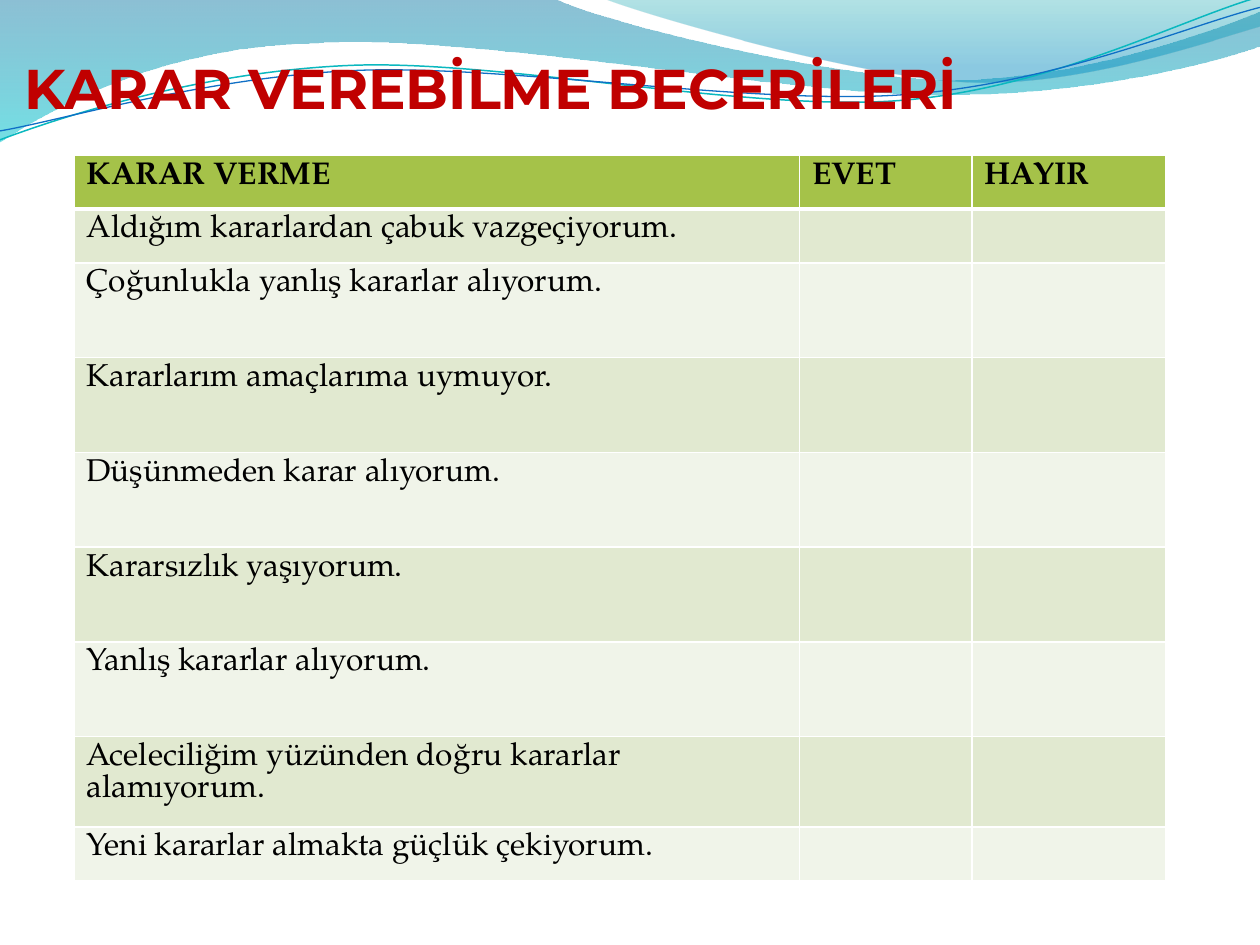
from dataclasses import dataclass
from lxml import etree
from pptx import Presentation
from pptx import util as u
from pptx.dml.color import RGBColor
from pptx.enum import text
from pptx.oxml import ns

Cm, Pt = u.Cm, u.Pt


@dataclass(frozen=True)
class Theme:
    title: str = "C00000"
    ink: str = "000000"
    rule: str = "FFFFFF"
    head: str = "A5C249"
    bands: tuple = ("E1E9D0", "F0F4E9")
    teal: str = "0AB8BF"
    blue: str = "0F6FC6"
    big: int = 32
    small: int = 18
    sans: str = "Montserrat"
    serif: str = "TeX Gyre Pagella"


T = Theme()

# Paths in cm: pairs are corners, six values are a curve (two handles, end)
WAVES = [
    ([(0, 0), (11.18, -0.03), (12.09, 0.43, 16.87, 1.6, 19.25, 1.6),
      (21.67, 1.6, 24.33, 0.66, 25.4, 0.23), (25.43, 0.91),
      (24.97, 1.12, 22.1, 1.93, 18.95, 1.91),
      (15.8, 1.91, 9.7, 0.71, 6.53, 0.86),
      (3.28, 0.91, 1.17, 2.11, -0.03, 2.87)],
     [(0, "0074A1", 45), (100, "00C6CF", 55)]),
    ([(12.17, -0.03), (12.93, 0.28, 17.32, 1.57, 19.53, 1.65),
      (21.74, 1.75, 24.41, 0.81, 25.4, 0.53), (25.4, 0)],
     [(0, "00A1A9", 30), (80, "008BBF", 45)]),
]
STROKES = [
    ([(0, 2.82), (1.22, 2.36, 4.01, 1.45, 7.04, 1.32),
      (10.03, 1.19, 15.06, 2.26, 18.11, 2.03),
      (21.16, 1.8, 23.83, 0.38, 25.35, -0.05)], T.teal, 0.85),
    ([(0, 2.64), (1.19, 2.44, 4.17, 1.55, 7.19, 1.42),
      (10.24, 1.3, 15.16, 2.13, 18.21, 1.91),
      (21.23, 1.7, 23.9, 0.53, 25.4, 0.15)], T.blue, 0.75),
]

ROWS = [
    (1.09, ("KARAR VERME", "EVET", "HAYIR")),
    (1.09, ("Aldığım kararlardan çabuk vazgeçiyorum.",)),
    (1.91, ("Çoğunlukla yanlış kararlar alıyorum.",)),
    (1.91, ("Kararlarım amaçlarıma uymuyor.",)),
    (1.91, ("Düşünmeden karar alıyorum.",)),
    (1.91, ("Kararsızlık yaşıyorum.",)),
    (1.91, ("Yanlış kararlar alıyorum.",)),
    (1.82, ("Aceleciliğim yüzünden doğru kararlar alamıyorum.",)),
    (1.08, ("Yeni kararlar almakta güçlük çekiyorum.",)),
]
COLS = (14.63, 3.47, 3.9)


def rgb(code):
    return RGBColor.from_string(code)


def assign(item, values):
    for name, value in values.items():
        setattr(item, name, value)


def style(font, color, **values):
    assign(font, values)
    font.color.rgb = rgb(color)


def node(parent, tag, **attrs):
    return etree.SubElement(parent, ns.qn(tag), attrs)


def bend(shape, path):
    """Turn the straight segments of curved parts into cubic curves."""
    track = shape._element.find(".//" + ns.qn("a:path"))
    for part, line in zip(path, list(track)):
        if len(part) == 2:
            continue
        curve = etree.Element(ns.qn("a:cubicBezTo"))
        for x, y in zip(part[::2], part[1::2]):
            node(curve, "a:pt", x=str(Cm(x) - shape.left),
                 y=str(Cm(y) - shape.top))
        track.replace(line, curve)


def outline(shapes, path, close):
    ends = [(Cm(part[-2]), Cm(part[-1])) for part in path]
    pen = shapes.build_freeform(*ends[0])
    pen.add_line_segments(ends[1:], close=close)
    shape = pen.convert_to_shape()
    shape.shadow.inherit = False
    bend(shape, path)
    return shape


def wave(shapes, path, stops):
    shape = outline(shapes, path, True)
    shape.line.fill.background()
    shape.fill.gradient()
    grad = shape._element.spPr.find(ns.qn("a:gradFill"))
    for child in list(grad):
        grad.remove(child)
    group = node(grad, "a:gsLst")
    for pos, color, alpha in stops:
        stop = node(group, "a:gs", pos=str(pos * 1000))
        tint = node(stop, "a:srgbClr", val=color)
        node(tint, "a:alpha", val=str(alpha * 1000))
    node(grad, "a:lin", ang="5400000", scaled="0")


def stroke(shapes, path, color, width):
    shape = outline(shapes, path, False)
    shape.fill.background()
    shape.line.color.rgb = rgb(color)
    shape.line.width = Pt(width)


def heading(slide, words):
    title = slide.shapes.title
    slide.shapes._spTree.append(title._element)  # in front of the waves
    assign(title, dict(left=Cm(0.5), top=Cm(1.08),
                       width=Cm(23.62), height=Cm(3)))
    frame = title.text_frame
    frame.text = words
    assign(frame, dict(margin_left=0, margin_right=0, margin_top=0,
                       margin_bottom=0, word_wrap=True,
                       auto_size=text.MSO_AUTO_SIZE.NONE,
                       vertical_anchor=text.MSO_ANCHOR.TOP))
    para = frame.paragraphs[0]
    para.alignment = text.PP_ALIGN.LEFT
    style(para.runs[0].font, T.title, name=T.sans, size=Pt(T.big), bold=True)


def border(cell, side, width):
    line = node(cell._tc.get_or_add_tcPr(), "a:ln" + side,
                w=str(Pt(width)))
    node(node(line, "a:solidFill"), "a:srgbClr", val=T.rule)


def fill_cell(cell, words, row):
    for side in "LRTB":
        thick = (row == 0 and side == "B") or (row == 1 and side == "T")
        border(cell, side, 3 if thick else 1)
    cell.fill.solid()
    cell.fill.fore_color.rgb = rgb(T.bands[(row - 1) % 2] if row else T.head)
    if words:
        cell.text = words
        para = cell.text_frame.paragraphs[0]
        para.line_spacing = Pt(T.small)
        style(para.runs[0].font, T.ink, name=T.serif, size=Pt(T.small),
              bold=row == 0)


def grid(slide):
    high = sum(height for height, _ in ROWS)
    table = slide.shapes.add_table(len(ROWS), len(COLS), Cm(1.49), Cm(3.12),
                                   Cm(sum(COLS)), Cm(high)).table
    table.horz_banding = False
    for col, width in zip(table.columns, COLS):
        col.width = Cm(width)
    for r, (height, words) in enumerate(ROWS):
        table.rows[r].height = Cm(height)
        for c in range(len(COLS)):
            fill_cell(table.cell(r, c), words[c] if c < len(words) else "", r)


def main():
    deck = Presentation()
    assign(deck, dict(slide_width=Cm(25.4), slide_height=Cm(19.05)))
    slide = deck.slides.add_slide(deck.slide_layouts[5])
    # Backdrop
    for item in WAVES:
        wave(slide.shapes, *item)
    pair = slide.shapes.add_group_shape()
    for item in STROKES:
        stroke(pair.shapes, *item)
    # Content
    heading(slide, "KARAR VEREBİLME BECERİLERİ")
    grid(slide)
    deck.save("out.pptx")


if __name__ == "__main__":
    main()
